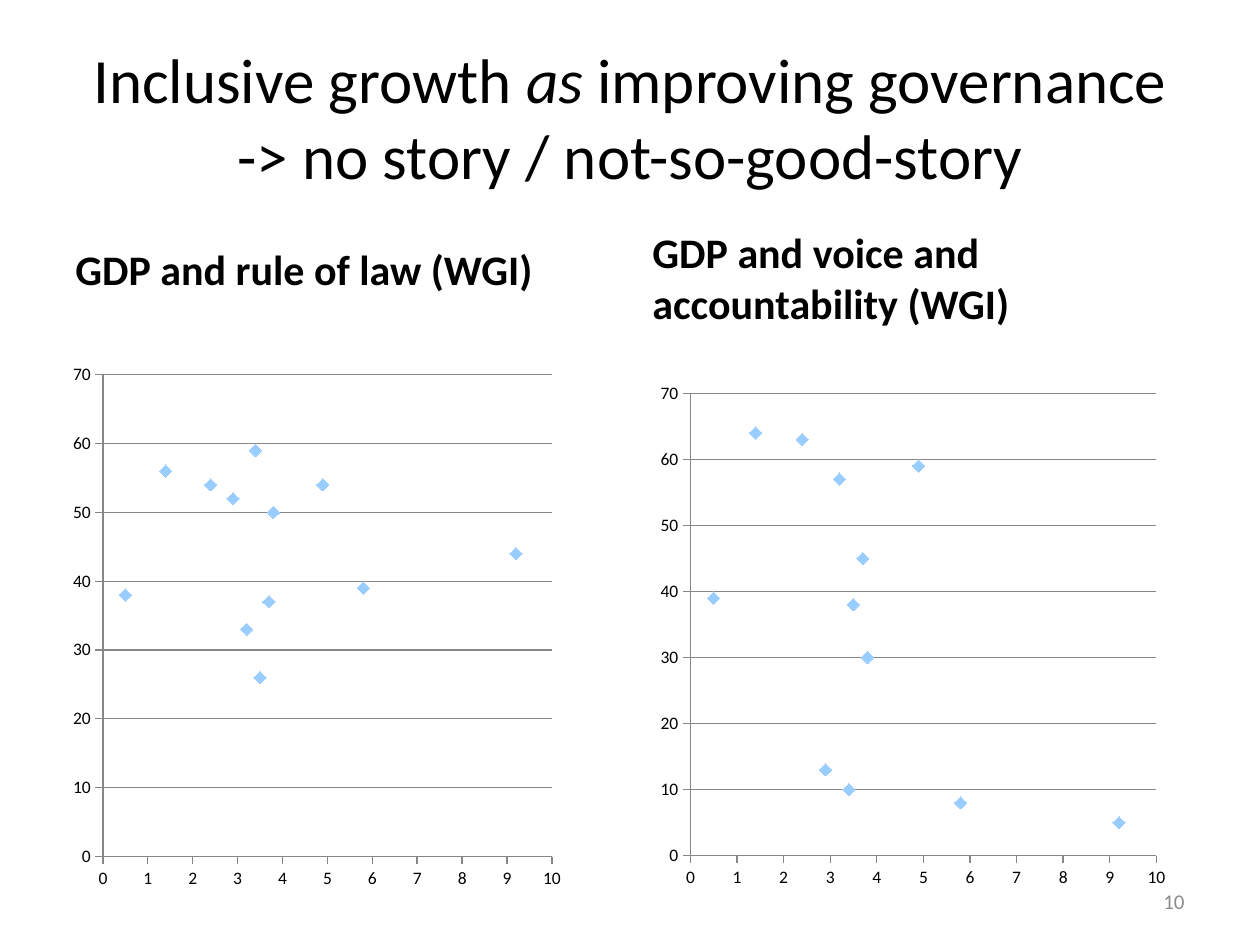
from pptx import Presentation
from pptx.chart.data import XyChartData
from pptx.dml.color import RGBColor
from pptx.enum.chart import XL_CHART_TYPE as ChartType, XL_MARKER_STYLE as Marker, XL_TICK_MARK as Tick
from pptx.enum.text import MSO_ANCHOR as Anchor, PP_ALIGN as Align
from pptx.util import Inches, Pt

COLUMNS, ROWS = 100, 75
GROWTH = [3.2, 3.5, 1.4, 9.2, 2.9, 2.4, 4.9, 3.7, 3.8, 3.4, 5.8, 0.5]
RULE_OF_LAW = [33, 26, 56, 44, 52, 54, 54, 37, 50, 59, 39, 38]
VOICE = [57, 38, 64, 5, 13, 63, 59, 45, 30, 10, 8, 39]


def color(value):
    """Turn a hex string into a colour."""
    return RGBColor.from_string(value)


def add_run(paragraph, text, size=24, ink="000000", bold=False, italic=False, font="Calibri"):
    """Append formatted text, with a line break at each newline."""
    for index, line in enumerate(text.split("\n")):
        if index:
            paragraph.add_line_break()
        run = paragraph.add_run()
        run.text = line
        run.font.name, run.font.size = font, Pt(size)
        run.font.bold, run.font.italic = bold, italic
        run.font.color.rgb = color(ink)


class Deck:
    """Hold the style and the current slide."""

    font, ink, axis_ink, point_ink = "Calibri", "000000", "878787", "99CCFF"

    def __init__(self):
        """Start a presentation with one blank slide."""
        self.file = Presentation()
        self.file.slide_width, self.file.slide_height = Inches(10), Inches(7.5)
        self.slide = self.file.slides.add_slide(self.file.slide_layouts[6])

    def place(self, column, row, width, height):
        """Convert grid units to slide lengths."""
        across = self.file.slide_width / COLUMNS
        down = self.file.slide_height / ROWS
        return [int(n) for n in (column * across, row * down, width * across, height * down)]

    def text(self, cell, parts, align=Align.LEFT, anchor=Anchor.MIDDLE, **style):
        """Add a text box from pairs of wording and format."""
        frame = self.slide.shapes.add_textbox(*self.place(*cell)).text_frame
        frame.word_wrap, frame.vertical_anchor = True, anchor
        paragraph = frame.paragraphs[0]
        paragraph.alignment = align
        for wording, extra in parts:
            add_run(paragraph, wording, font=self.font, **{**style, **extra})

    def heading(self, cell, wording):
        """Add a bold heading above a chart."""
        self.text(cell, [(wording, {})], anchor=Anchor.BOTTOM, bold=True)

    def axis(self, axis, top, step, grid):
        """Scale and style one chart axis."""
        axis.minimum_scale, axis.maximum_scale, axis.major_unit = 0, top, step
        axis.has_major_gridlines = grid
        axis.major_tick_mark, axis.minor_tick_mark = Tick.OUTSIDE, Tick.NONE
        axis.tick_labels.number_format = "0"
        axis.tick_labels.number_format_is_linked = False
        lines = [axis.format.line] + ([axis.major_gridlines.format.line] if grid else [])
        for line in lines:
            line.color.rgb, line.width = color(self.axis_ink), Pt(0.75)

    def scatter(self, cell, xs, ys):
        """Add a scatter chart of unconnected diamonds."""
        data = XyChartData()
        points = data.add_series("Series 1")
        for x, y in zip(xs, ys):
            points.add_data_point(x, y)
        chart = self.slide.shapes.add_chart(ChartType.XY_SCATTER, *self.place(*cell), data).chart
        chart.has_legend = chart.has_title = False
        chart.font.name, chart.font.size = self.font, Pt(10)
        chart.font.color.rgb = color(self.ink)
        self.axis(chart.category_axis, 10, 1, False)
        self.axis(chart.value_axis, 70, 10, True)
        plot = chart.plots[0]
        plot.vary_by_categories = False
        series = plot.series[0]
        series.format.line.fill.background()
        series.marker.style, series.marker.size = Marker.DIAMOND, 7
        series.marker.format.fill.solid()
        series.marker.format.fill.fore_color.rgb = color(self.point_ink)
        series.marker.format.line.fill.background()


def main():
    """Build and save the slide."""
    deck = Deck()
    title = [("Inclusive growth ", {}), ("as ", {"italic": True}),
             ("improving governance\n-> no story / not-so-good-story", {})]
    deck.text((5, 3, 90, 12.5), title, align=Align.CENTER, size=36)
    deck.heading((5, 16.8, 44.2, 7), "GDP and rule of law (WGI)")
    deck.heading((50.8, 16.8, 44.2, 9.7), "GDP and voice and accountability (WGI)")
    deck.text((71.7, 69.5, 23.3, 4), [("10", {})], align=Align.RIGHT, size=12, ink="8C8C8C")
    deck.scatter((5, 28.1, 40.3, 43.3), GROWTH, RULE_OF_LAW)
    deck.scatter((51.6, 29.6, 41.7, 41.7), GROWTH, VOICE)
    deck.file.save("out.pptx")


if __name__ == "__main__":
    main()
